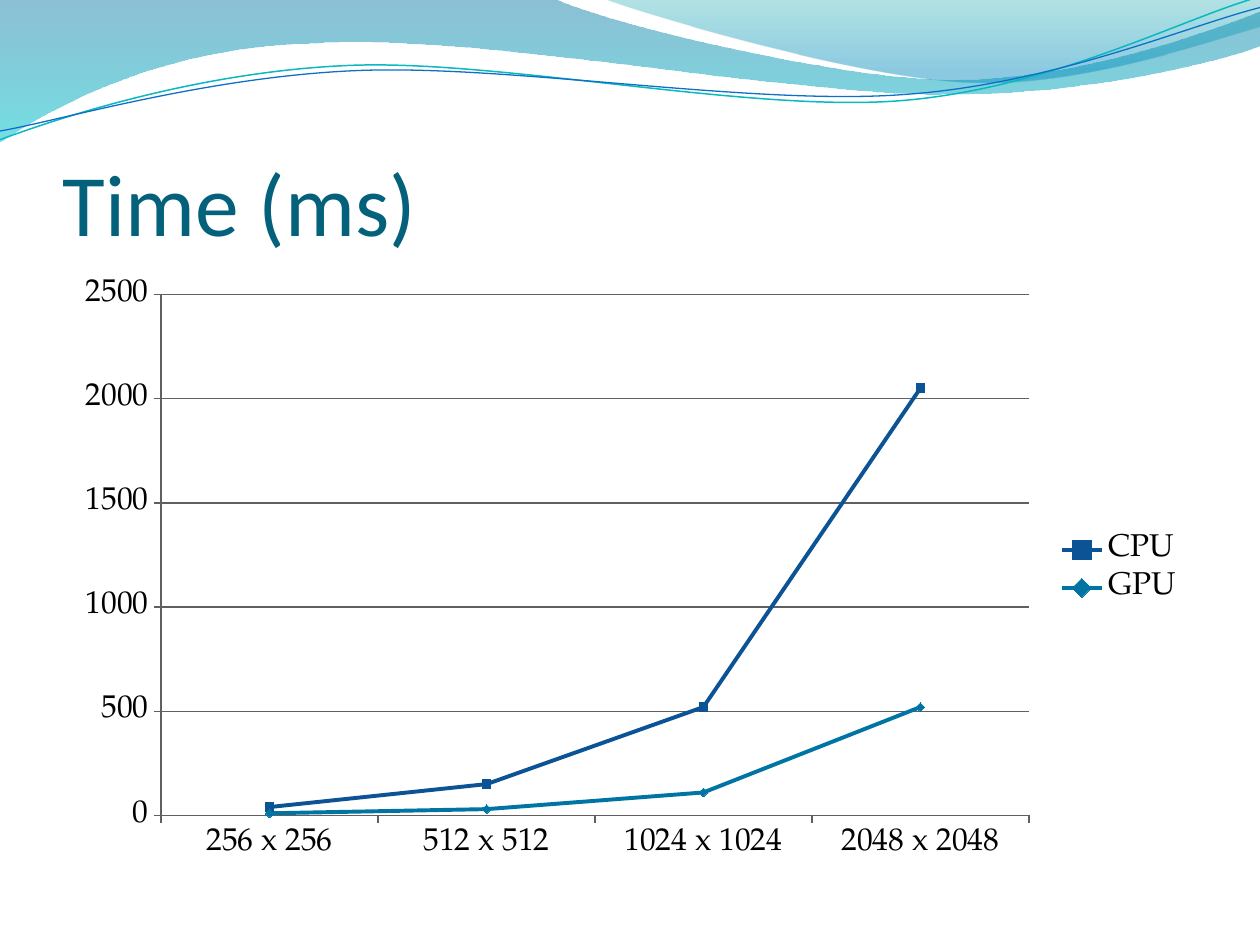
from lxml import etree
from pptx import Presentation
from pptx.chart.data import CategoryChartData
from pptx.dml.color import RGBColor
from pptx.enum.chart import XL_CHART_TYPE, XL_LEGEND_POSITION, XL_MARKER_STYLE, XL_TICK_MARK
from pptx.enum.text import MSO_ANCHOR
from pptx.oxml.ns import qn
from pptx.util import Pt

LINE_CHART = XL_CHART_TYPE.LINE_MARKERS
LEGEND_RIGHT = XL_LEGEND_POSITION.RIGHT
SQUARE, DIAMOND = XL_MARKER_STYLE.SQUARE, XL_MARKER_STYLE.DIAMOND
TICK_OUTSIDE = XL_TICK_MARK.OUTSIDE
BOTTOM = MSO_ANCHOR.BOTTOM

TITLE_TEAL = RGBColor(0x04, 0x61, 0x7B)
DEEP_BLUE = RGBColor(0x00, 0x74, 0xA1)
AQUA = RGBColor(0x00, 0xC6, 0xCF)
SEA_GREEN = RGBColor(0x00, 0xA1, 0xA9)
SKY_BLUE = RGBColor(0x00, 0x8B, 0xBF)
TEAL_LINE = RGBColor(0x0A, 0xB8, 0xBF)
BLUE_LINE = RGBColor(0x0F, 0x6F, 0xC6)
CPU_BLUE = RGBColor(0x0B, 0x53, 0x95)
GPU_BLUE = RGBColor(0x00, 0x74, 0xA2)
GRID_GRAY = RGBColor(0x60, 0x60, 0x60)
BLACK = RGBColor(0, 0, 0)

TITLE_FONT = "Calibri"
CHART_FONT = "TeX Gyre Pagella"
CURVE_TILT = 357.3

# Outlines in points: a pair is a straight step, six numbers are a Bezier curve
BROAD_WAVE = [
    (0, 0), (316.8, -0.7),
    (342.7, 12.2, 478.1, 45.4, 545.8, 45.4),
    (614.2, 45.4, 689.8, 18.7, 720, 6.5),
    (720.7, 25.9),
    (707.8, 31.7, 626.4, 54.7, 537.1, 54),
    (447.8, 54, 275, 20.2, 185, 24.5),
    (92.9, 25.9, 33.1, 59.8, -0.7, 81.4),
    (0, 0),
]
RIGHT_WAVE = [
    (344.9, -0.7),
    (366.5, 7.9, 491, 44.6, 553.7, 46.8),
    (616.3, 49.7, 691.9, 23, 720, 15.1),
    (720, 0), (344.9, -0.7),
]
# The two thin curves are given before their tilt
TEAL_CURVE = [
    (-1.4, 62.9),
    (33.8, 51.7, 114.1, 29.4, 199.8, 29.9),
    (284.9, 30.3, 425.8, 67.3, 512.4, 64.9),
    (599, 62.4, 676.4, 25.7, 720.2, 15.5),
]
BLUE_CURVE = [
    (-1.1, 57.9),
    (32.9, 53.7, 118.3, 32.5, 204.1, 33),
    (290.6, 33.4, 428.9, 63.8, 515.5, 61.4),
    (601.3, 59.6, 678.4, 30.1, 721.4, 21.3),
]


def add_outline(slide, outline, close):
    """Draw an outline, joining the three points of each curve into one segment."""
    points = [(Pt(x), Pt(y)) for step in outline for x, y in zip(step[::2], step[1::2])]
    builder = slide.shapes.build_freeform(*points[0])
    builder.add_line_segments(points[1:], close=close)
    shape = builder.convert_to_shape()
    shape.shadow.inherit = False

    segments = iter(list(shape._element.iter(qn("a:lnTo"))))
    for step in outline[1:]:
        segment = next(segments)
        if len(step) == 6:
            segment.tag = qn("a:cubicBezTo")
            for _ in range(2):
                extra = next(segments)
                segment.append(extra[0])
                extra.getparent().remove(extra)
    return shape


def add_wave(slide, outline, stops):
    """Add a wave with a downward gradient of (position, colour, opacity %) stops."""
    wave = add_outline(slide, outline, close=True)
    wave.line.fill.background()
    wave.fill.gradient()
    wave.fill.gradient_angle = 270
    for stop, (position, color, _) in zip(wave.fill.gradient_stops, stops):
        stop.position = position
        stop.color.rgb = color
    colors = wave._element.spPr.iter(qn("a:srgbClr"))
    for color, (_, _, opacity) in zip(list(colors), stops):
        etree.SubElement(color, qn("a:alpha"), val=str(opacity * 1000))


def add_curve(slide, outline, color, width):
    curve = add_outline(slide, outline, close=False)
    curve.rotation = CURVE_TILT
    curve.fill.background()
    style_line(curve.line, color, width)


def add_text(slide, text, *, left, top, width, height, size, font, color, anchor):
    box = slide.shapes.add_textbox(Pt(left), Pt(top), Pt(width), Pt(height))
    frame = box.text_frame
    frame.word_wrap = True
    frame.vertical_anchor = anchor
    frame.margin_left = frame.margin_right = frame.margin_bottom = 0
    run = frame.paragraphs[0].add_run()
    run.text = text
    run.font.size = Pt(size)
    run.font.name = font
    run.font.color.rgb = color


def style_line(line, color, width):
    line.color.rgb = color
    line.width = Pt(width)


def add_time_chart(slide):
    data = CategoryChartData()
    data.categories = [f"{side} x {side}" for side in (256, 512, 1024, 2048)]
    data.add_series("CPU", (40, 150, 520, 2050))
    data.add_series("GPU", (10, 30, 110, 520))
    chart = slide.shapes.add_chart(
        LINE_CHART, Pt(36), Pt(152.4), Pt(648), Pt(345.6), data).chart
    chart.has_title = False
    chart.font.size = Pt(18)
    chart.font.name = CHART_FONT
    chart.font.color.rgb = BLACK

    # Legend
    chart.has_legend = True
    chart.legend.position = LEGEND_RIGHT
    chart.legend.include_in_layout = False

    # Axes and gridlines
    for axis in (chart.category_axis, chart.value_axis):
        axis.major_tick_mark = TICK_OUTSIDE
        style_line(axis.format.line, GRID_GRAY, 0.75)
    times = chart.value_axis
    times.minimum_scale, times.maximum_scale, times.major_unit = 0, 2500, 500
    times.has_major_gridlines = True
    style_line(times.major_gridlines.format.line, GRID_GRAY, 0.75)

    # Series
    plot = chart.plots[0]
    plot.vary_by_categories = False
    looks = ((CPU_BLUE, SQUARE), (GPU_BLUE, DIAMOND))
    for series, (color, marker) in zip(plot.series, looks):
        series.smooth = False
        style_line(series.format.line, color, 2.25)
        series.marker.style = marker
        series.marker.size = 5
        series.marker.format.fill.solid()
        series.marker.format.fill.fore_color.rgb = color
        series.marker.format.line.color.rgb = color


def main():
    deck = Presentation()
    deck.slide_width, deck.slide_height = Pt(720), Pt(540)
    slide = deck.slides.add_slide(deck.slide_layouts[6])

    # Wave decoration along the top
    add_wave(slide, BROAD_WAVE, [(0, DEEP_BLUE, 45), (1, AQUA, 55)])
    add_wave(slide, RIGHT_WAVE, [(0, SEA_GREEN, 30), (0.8, SKY_BLUE, 45)])
    add_curve(slide, TEAL_CURVE, TEAL_LINE, 0.85)
    add_curve(slide, BLUE_CURVE, BLUE_LINE, 0.75)

    # Title and chart
    add_text(slide, "Time (ms)", left=36, top=55, width=648, height=90,
             size=50, font=TITLE_FONT, color=TITLE_TEAL, anchor=BOTTOM)
    add_time_chart(slide)
    deck.save("out.pptx")


if __name__ == "__main__":
    main()
